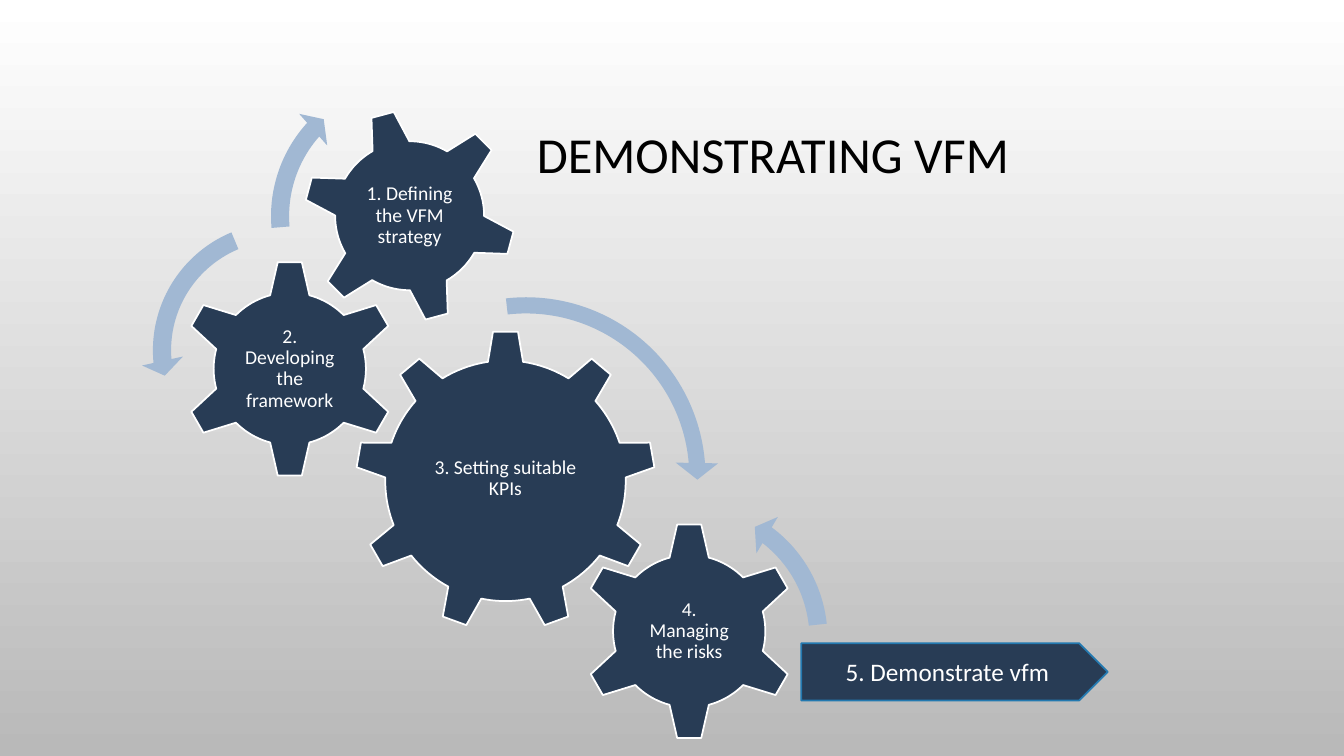
"""Build the slide of four meshing gears leading to value-for-money delivery."""
import math

import pptx
import pptx.dml.color
import pptx.enum.shapes
import pptx.enum.text
import pptx.util

Pt = pptx.util.Pt
MSO = pptx.enum.shapes.MSO_SHAPE
ALIGN = pptx.enum.text.PP_ALIGN
MIDDLE = pptx.enum.text.MSO_ANCHOR.MIDDLE

THEME = {
    "font": "Calibri", "title": 36, "gear": 14, "result": 18,
    "black": "000000", "white": "FFFFFF", "navy": "283C55",
    "arrow": "A1B8D3", "outline": "2379B0", "bottom": "B9B9B9", "line": 1.25,
}

TITLE = ("DEMONSTRATING VFM", (72, 49, 656, 126))
RESULT = ("5. Demonstrate vfm", (572.4, 459.4, 218.9, 41))

SMALL = {"teeth": 6, "tip": (76.7, 6.46), "root": (54.4, 14.95)}
TILTED = {"teeth": 6, "tip": (75, 6.3), "root": (53.2, 14.8)}
LARGE = {"teeth": 9, "tip": (106.8, 4.8), "root": (85.9, 8.4)}
GEARS = [
    ("3. Setting suitable KPIs", (361.1, 343.5), LARGE, 0, 116.6),
    ("2. Developing the framework", (207, 263.5), SMALL, 0, 67),
    ("1. Defining the VFM strategy", (292.6, 154.1), TILTED, -15, 72),
    ("4. Managing the risks", (492.3, 450.9), SMALL, 0, 67),
]

SHORT_ARC = (0.06, 3.941, 133.138, 105.082, 0.07)
ARROWS = [
    (MSO.CIRCULAR_ARROW, (238.3, 203), 275, (0.042, 3.355, 213.251, 158.123, 0.055), 0, False),
    (MSO.LEFT_CIRCULAR_ARROW, (100.8, 150.5), 199.5, (0.065, 4.3, 104.891, 148.378, 0.075), 0, False),
    (MSO.CIRCULAR_ARROW, (185, 46.8), 215.3, SHORT_ARC, 0, False),
    (MSO.CIRCULAR_ARROW, (384.5, 348.5), 215.3, SHORT_ARC, 349, True),
]


def rgb(name):
    return pptx.dml.color.RGBColor.from_string(THEME[name])


def paint(sp, fill, line=None):
    sp.shadow.inherit = False
    sp.fill.solid()
    sp.fill.fore_color.rgb = rgb(fill)
    if line:
        sp.line.color.rgb = rgb(line)
        sp.line.width = Pt(THEME["line"])
    else:
        sp.line.fill.background()


def write(sp, text, size, color, align=ALIGN.CENTER, spacing=None):
    tf = sp.text_frame
    tf.word_wrap = True
    tf.vertical_anchor = MIDDLE
    p = tf.paragraphs[0]
    p.alignment = align
    p.line_spacing = spacing
    r = p.add_run()
    r.text = text
    r.font.name = THEME["font"]
    r.font.size = Pt(THEME[size])
    r.font.color.rgb = rgb(color)


def gear_points(center, gear, turn):
    """Return the outline of a gear, with each valley sampled as an arc."""
    pitch = 360 / gear["teeth"]
    tip_radius, tip_half = gear["tip"]
    root_radius, root_half = gear["root"]
    steps = 10
    polar = []
    for tooth in range(gear["teeth"]):
        axis = turn + tooth * pitch
        polar += [(tip_radius, axis - tip_half), (tip_radius, axis + tip_half)]
        valley = pitch - 2 * root_half
        polar += [(root_radius, axis + root_half + valley * i / steps) for i in range(steps + 1)]
    return [(Pt(center[0] + radius * math.sin(math.radians(angle))),
             Pt(center[1] - radius * math.cos(math.radians(angle))))
            for radius, angle in polar]


def add_gear(s, text, center, gear, turn, text_width):
    points = gear_points(center, gear, turn)
    builder = s.shapes.build_freeform(*points[0], scale=1.0)
    builder.add_line_segments(points[1:], close=True)
    sp = builder.convert_to_shape()
    paint(sp, "navy", "white")
    write(sp, text, "gear", "white", spacing=0.9)
    tf = sp.text_frame
    tf.margin_left = tf.margin_right = int((sp.width - Pt(text_width)) / 2)


def add_arrow(s, kind, corner, size, adjustments, rotation, flipped):
    sp = s.shapes.add_shape(kind, *map(Pt, (*corner, size, size)))
    for i, value in enumerate(adjustments):
        sp.adjustments[i] = value
    sp.rotation = rotation
    if flipped:
        sp.element.spPr.xfrm.set("flipH", "1")
    paint(sp, "arrow")


def main():
    prs = pptx.Presentation()
    prs.slide_width, prs.slide_height = Pt(960), Pt(540)
    s = prs.slides.add_slide(prs.slide_layouts[6])
    fill = s.background.fill
    fill.gradient()
    fill.gradient_angle = 270
    for stop, color, position in zip(fill.gradient_stops, ("white", "bottom"), (0, 1)):
        stop.color.rgb = rgb(color)
        stop.position = position

    text, box = TITLE
    write(s.shapes.add_textbox(*map(Pt, box)), text, "title", "black", ALIGN.RIGHT, 0.9)
    for gear in GEARS[:3]:
        add_gear(s, *gear)
    for arrow in ARROWS[:3]:
        add_arrow(s, *arrow)
    add_gear(s, *GEARS[3])
    add_arrow(s, *ARROWS[3])

    text, box = RESULT
    sp = s.shapes.add_shape(MSO.PENTAGON, *map(Pt, box))
    paint(sp, "navy", "outline")
    write(sp, text, "result", "white")
    prs.save("out.pptx")


if __name__ == "__main__":
    main()
